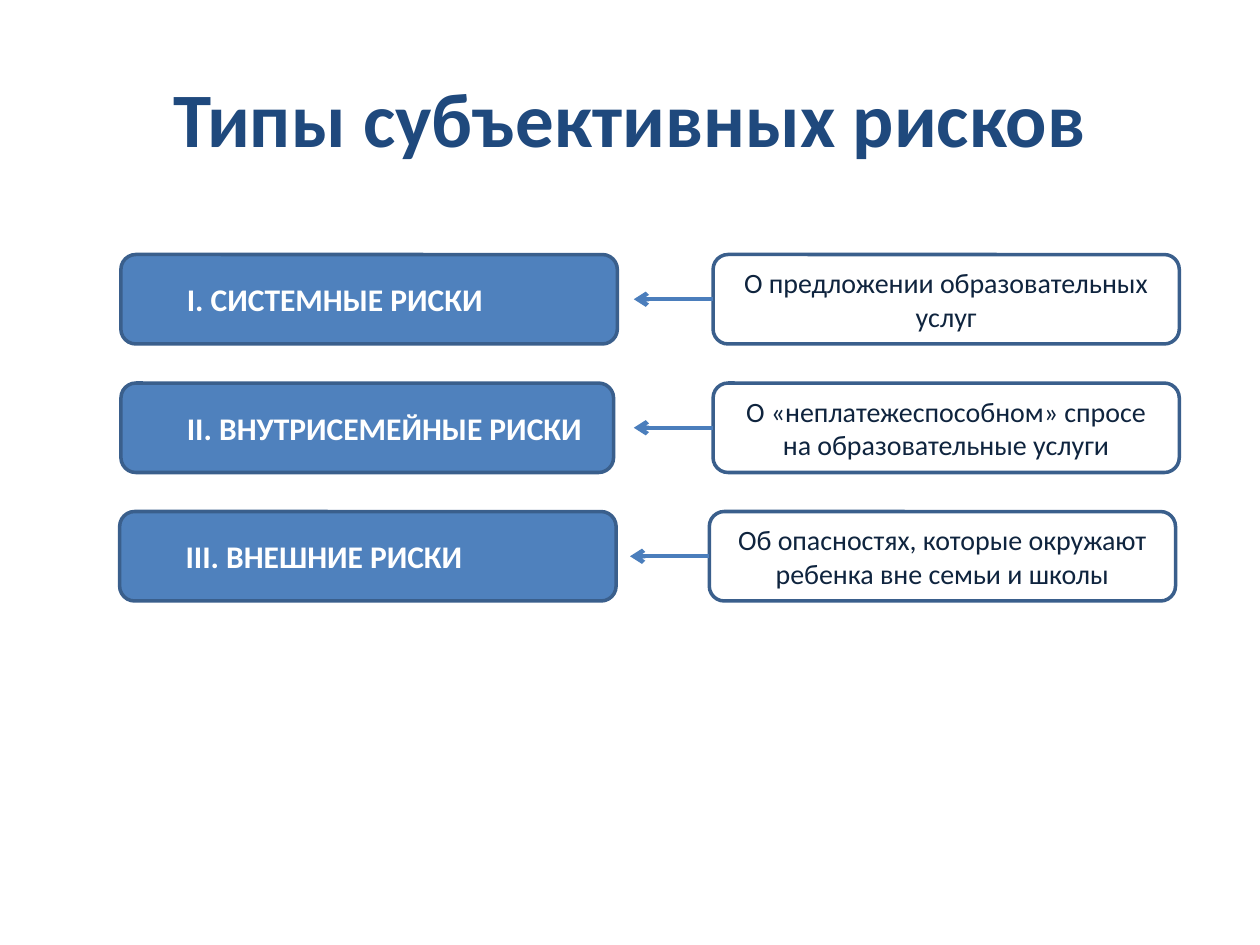
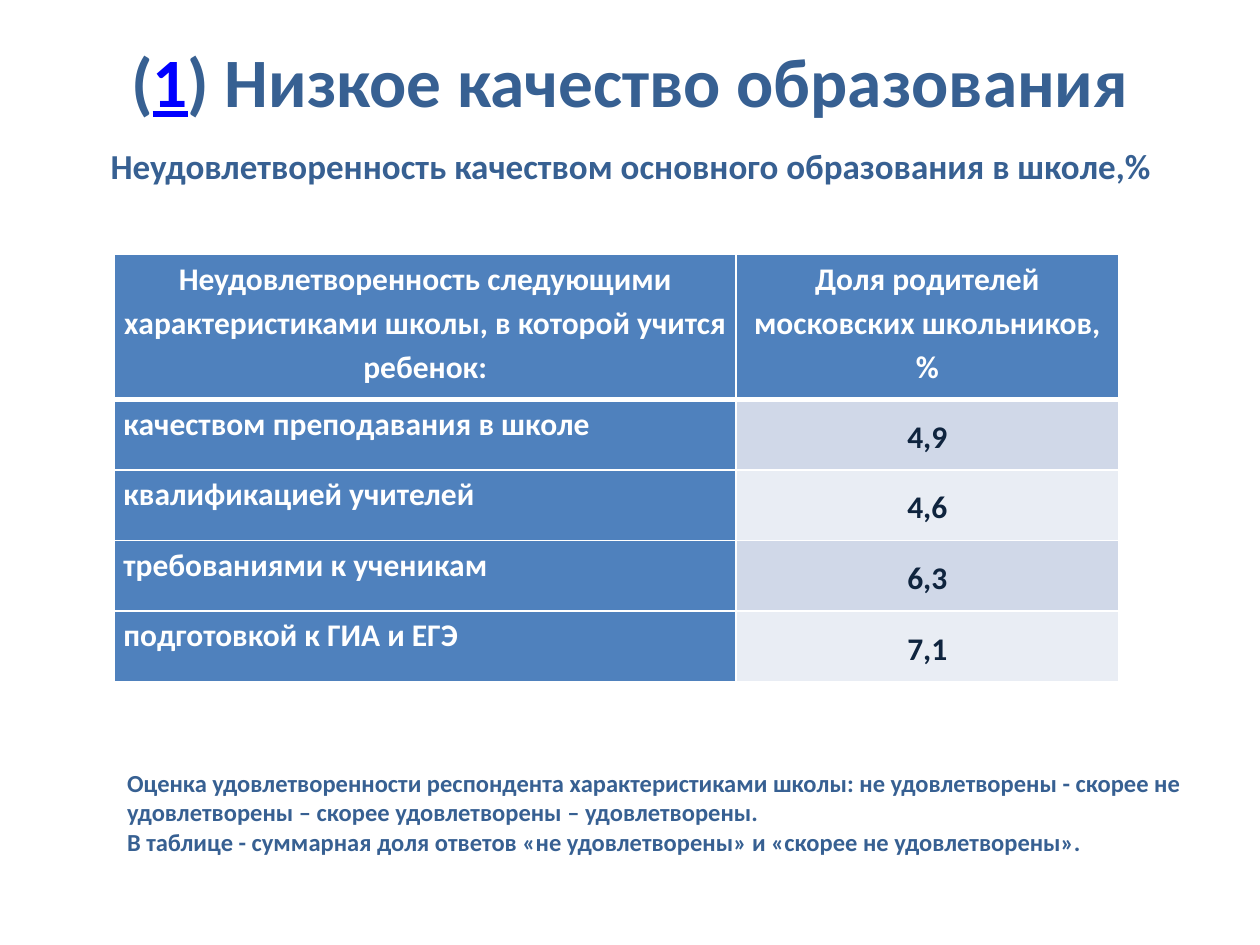
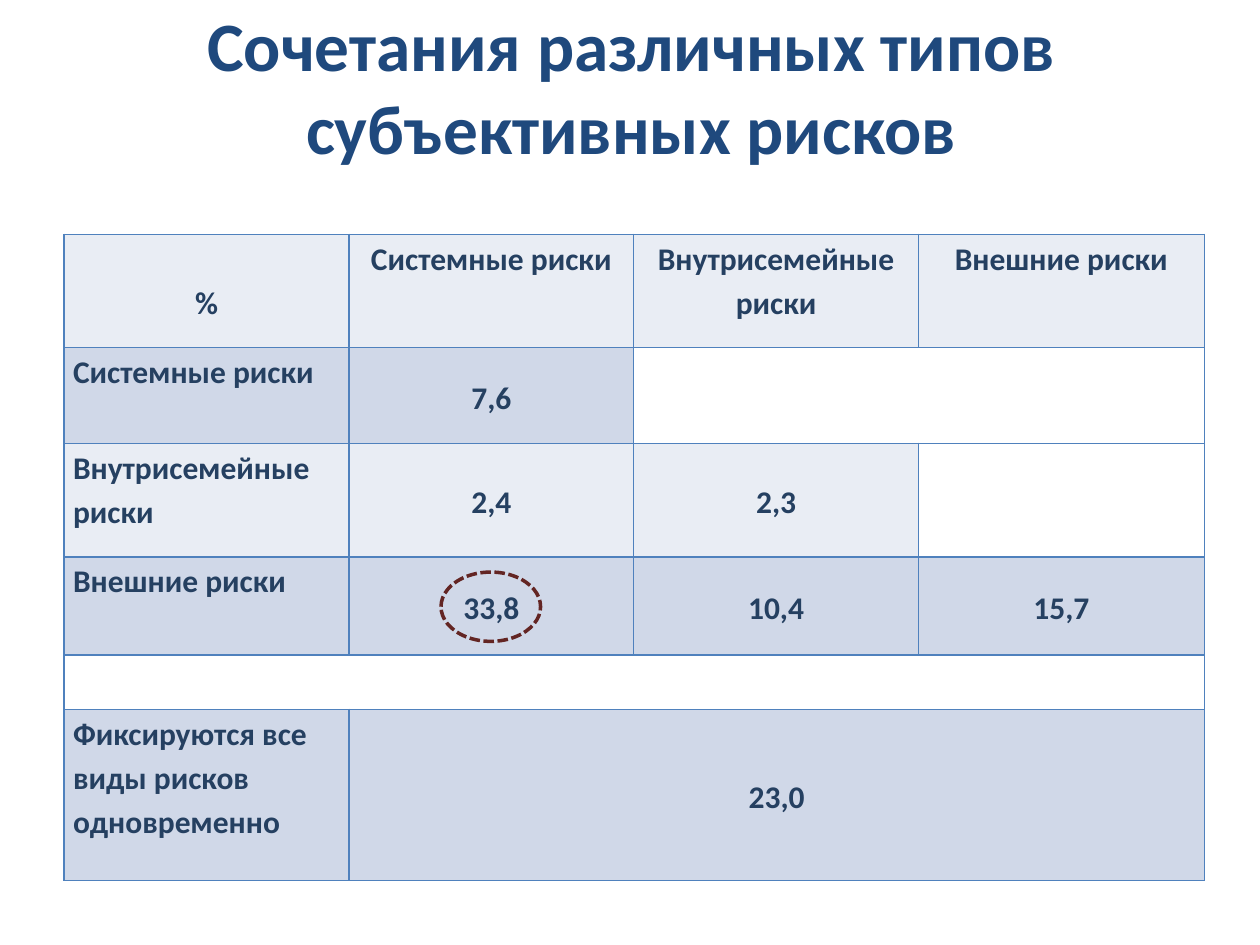
from pptx import Presentation
from pptx.dml.color import RGBColor
from pptx.enum.dml import MSO_LINE
from pptx.enum.shapes import MSO_CONNECTOR, MSO_SHAPE as Shape
from pptx.enum.text import MSO_ANCHOR as Anchor, MSO_AUTO_SIZE as Fit, PP_ALIGN as Align
from pptx.oxml.ns import qn
from pptx.util import Inches, Pt
from lxml.etree import SubElement

FONT = "Calibri"
HEX = {
    "navy": "1F497D", "steel": "376092", "ink": "0F243E", "slate": "254061",
    "blue": "4F81BD", "edge": "3A5F8C", "arrow": "4B7EBC", "link": "0000FF",
    "band": "D0D8E8", "pale": "E9EDF4", "white": "FFFFFF", "wine": "632523",
}


def rgb(name):
    return RGBColor.from_string(HEX[name])


def box(*sizes):
    return [Inches(size) for size in sizes]


def style(para, size, color, bold=True, align=Align.LEFT):
    para.alignment = align
    font = para.font
    font.name, font.size, font.bold = FONT, Pt(size), bold
    font.color.rgb = rgb(color)


def add_slide(deck, title, size, color, left=0.5, top=0.3):
    slide = deck.slides.add_slide(deck.slide_layouts[5])
    head = slide.shapes.title
    head.left, head.top, head.width, head.height = box(left, top, 9, 1.25)
    frame = head.text_frame
    frame.text = title
    frame.auto_size, frame.vertical_anchor = Fit.NONE, Anchor.MIDDLE
    style(frame.paragraphs[0], size, color, align=Align.CENTER)
    return slide


def add_shape(slide, kind, spot, edge, fill=None):
    shape = slide.shapes.add_shape(kind, *box(*spot))
    shape.shadow.inherit = False
    if fill:
        shape.fill.solid()
        shape.fill.fore_color.rgb = rgb(fill)
    else:
        shape.fill.background()
    shape.line.color.rgb = rgb(edge)
    shape.line.width = Pt(2)
    return shape


def add_card(slide, spot, text, size, color, fill=None, indent=0, **look):
    card = add_shape(slide, Shape.ROUNDED_RECTANGLE, spot, "edge", fill)
    frame = card.text_frame
    frame.word_wrap, frame.vertical_anchor = True, Anchor.MIDDLE
    frame.text = text
    para = frame.paragraphs[0]
    style(para, size, color, **look)
    if indent:
        para._p.get_or_add_pPr().set("marL", str(Inches(indent)))
    return card


def add_arrow(slide, card, span):
    """Draw an arrow that leaves the card's left side and runs left."""
    mid = card.top + card.height // 2
    line = slide.shapes.add_connector(
        MSO_CONNECTOR.STRAIGHT, card.left, mid, card.left - Inches(span), mid)
    line.begin_connect(card, 1)
    line.line.color.rgb = rgb("arrow")
    line.line.width = Pt(2.5)
    SubElement(line.line._get_or_add_ln(), qn("a:tailEnd"), type="arrow")
    SubElement(line._element.spPr, qn("a:effectLst"))


def add_text(slide, spot, lines, size, wrap=True):
    frame = slide.shapes.add_textbox(*box(*spot)).text_frame
    frame.word_wrap, frame.vertical_anchor = wrap, Anchor.MIDDLE
    frame.auto_size = Fit.SHAPE_TO_FIT_TEXT
    frame.text = "\n".join(lines)
    for para in frame.paragraphs:
        style(para, size, "steel")


def set_edges(cell, color, heavy=()):
    """Line all four sides, with the heavy ones three points wide."""
    props = cell._tc.get_or_add_tcPr()
    for side in "LRTB":
        width = Pt(3 if side in heavy else 1)
        line = SubElement(props, qn(f"a:ln{side}"), w=str(width))
        fill = SubElement(line, qn("a:solidFill"))
        SubElement(fill, qn("a:srgbClr"), val=HEX[color])


def add_table(slide, left, top, cols, rows, texts, merges, edge, look, heavy=False):
    """Fill a grid; look(row, col) gives the fill and text colours of a cell."""
    table = slide.shapes.add_table(
        len(rows), len(cols), *box(left, top, sum(cols), sum(rows))).table
    for col, width in zip(table.columns, cols):
        col.width = Inches(width)
    for row, height in zip(table.rows, rows):
        row.height = Inches(height)
    for row, first, last in merges:
        table.cell(row, first).merge(table.cell(row, last))
    for r in range(len(rows)):
        for c in range(len(cols)):
            cell = table.cell(r, c)
            sides = {0: "B", 1: "T"}.get(r, "") if heavy else ""
            set_edges(cell, edge, sides)
            cell.margin_left = cell.margin_right = Inches(0.07)
            cell.margin_top = cell.margin_bottom = 0
            text = texts[r][c] if c < len(texts[r]) else ""
            if not text:
                cell.fill.background()
                continue
            fill, color = look(r, c)
            cell.fill.solid()
            cell.fill.fore_color.rgb = rgb(fill)
            cell.text = text
            cell.vertical_anchor = Anchor.MIDDLE if r and c else Anchor.TOP
            para = cell.text_frame.paragraphs[0]
            style(para, 18, color, align=Align.LEFT if r and not c else Align.CENTER)
            para.line_spacing = 1.15
    return table


def add_types(deck):
    slide = add_slide(deck, "Типы субъективных рисков", 44, "navy")
    risks = [
        ("I. СИСТЕМНЫЕ РИСКИ", 0.96, 3.94,
         "О предложении образовательных услуг", 5.66),
        ("II. ВНУТРИСЕМЕЙНЫЕ РИСКИ", 0.96, 3.91,
         "О «неплатежеспособном» спросе на образовательные услуги", 5.66),
        ("III. ВНЕШНИЕ РИСКИ", 0.95, 3.94,
         "Об опасностях, которые окружают ребенка вне семьи и школы", 5.63),
    ]
    for i, (name, left, width, note, start) in enumerate(risks):
        top = 2.02 + 1.02 * i
        add_card(slide, (left, top, width, 0.71), name, 18, "white", "blue", 0.39)
        card = add_card(slide, (start, top, 3.7, 0.71), note, 16, "ink",
                        bold=False, align=Align.CENTER)
        add_arrow(slide, card, 0.63)


def add_school(deck):
    slide = add_slide(deck, "(", 39.6, "steel")
    frame = slide.shapes.title.text_frame
    frame.vertical_anchor, frame.margin_top = Anchor.TOP, 0
    para = frame.paragraphs[0]
    mark = para.add_run()
    mark.text = "1"
    mark.font.underline = True
    mark.font.color.rgb = rgb("link")
    para.add_run().text = ") Низкое качество образования"

    def look(r, c):
        if not r or not c:
            return "blue", "white"
        return ("band" if r % 2 else "pale"), "ink"

    texts = [
        ("Неудовлетворенность следующими характеристиками школы, "
         "в которой учится ребенок:", "Доля родителей московских школьников, %"),
        ("качеством преподавания в школе", "4,9"),
        ("квалификацией учителей", "4,6"),
        ("требованиями к ученикам", "6,3"),
        ("подготовкой к ГИА и ЕГЭ", "7,1"),
    ]
    add_table(slide, 0.91, 2.02, [4.93, 3.04], [1.15] + [0.56] * 4, texts, [],
              "white", look, heavy=True)
    add_text(slide, (0.78, 1.09, 8.52, 0.44),
             ["Неудовлетворенность качеством основного образования в школе,%"],
             20, wrap=False)
    add_text(slide, (0.91, 6.04, 8.58, 0.81), [
        "Оценка удовлетворенности респондента характеристиками школы: "
        "не удовлетворены - скорее не удовлетворены – скорее удовлетворены – "
        "удовлетворены.",
        "В таблице - суммарная доля ответов «не удовлетворены» и "
        "«скорее не удовлетворены»."], 14)


def add_mixes(deck):
    slide = add_slide(deck, "Сочетания различных типов субъективных рисков",
                      39.6, "navy", 0.51, 0.05)
    kinds = ["Системные риски", "Внутрисемейные риски", "Внешние риски"]
    shares = [["7,6"], ["2,4", "2,3"], ["33,8", "10,4", "15,7"]]
    texts = [["%"] + kinds]
    texts += [[kind] + share for kind, share in zip(kinds, shares)]
    texts += [[], ["Фиксируются все виды рисков одновременно", "23,0"]]
    table = add_table(
        slide, 0.51, 1.86, [2.26, 2.26, 2.26, 2.27],
        [0.9, 0.76, 0.9, 0.78, 0.43, 1.36], texts,
        [(1, 2, 3), (4, 0, 3), (5, 1, 3)], "blue",
        lambda r, c: ("band" if r % 2 else "pale", "slate"))
    table.cell(0, 0).margin_top = Inches(0.35)
    ring = add_shape(slide, Shape.OVAL, (3.5, 4.54, 0.79, 0.55), "wine")
    ring.line.dash_style = MSO_LINE.SQUARE_DOT


def main():
    deck = Presentation()
    deck.slide_width, deck.slide_height = box(10, 7.5)
    add_types(deck)
    add_school(deck)
    add_mixes(deck)
    deck.save("out.pptx")


if __name__ == "__main__":
    main()
